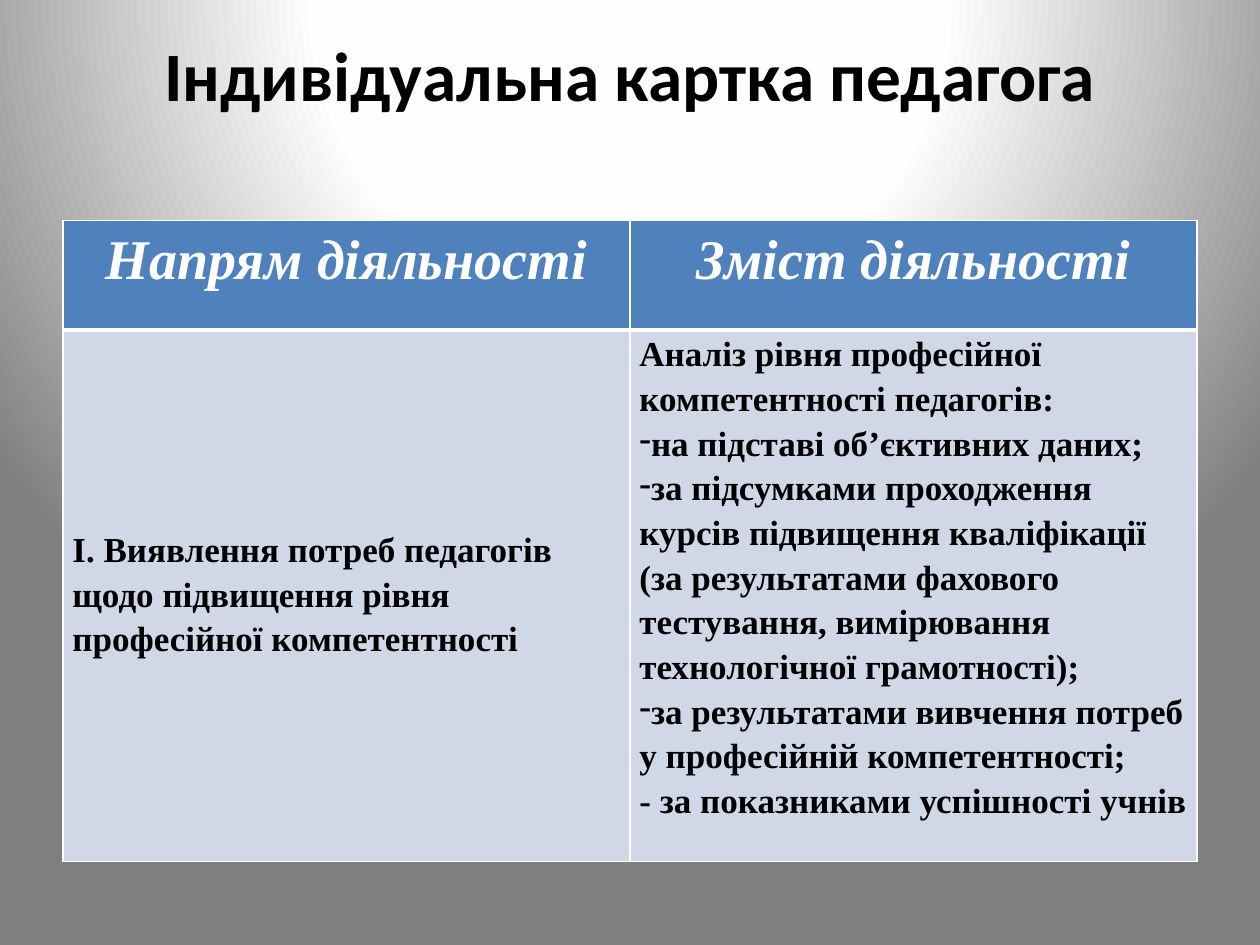
import pptx
import pptx.util
import pptx.oxml
import pptx.oxml.ns
import pptx.dml.color
import pptx.enum.text
from lxml import etree

Pt = pptx.util.Pt
qn = pptx.oxml.ns.qn
ALIGN = pptx.enum.text.PP_ALIGN
ANCHOR = pptx.enum.text.MSO_ANCHOR

COLORS = {
    "black": "000000",
    "white": "FFFFFF",
    "near_white": "FEFEFE",
    "grey": "7F7F7F",
    "header": "4F81BD",
    "body": "D0D8E8",
}

HEADERS = ["Напрям діяльності", "Зміст діяльності"]
DIRECTION = ["І. Виявлення потреб педагогів щодо підвищення рівня професійної компетентності"]
# Each paragraph of the content cell: text, bulleted or not
CONTENT = [
    ("Аналіз рівня професійної компетентності педагогів:", False),
    ("на підставі об’єктивних даних;", True),
    ("за підсумками проходження курсів підвищення кваліфікації (за результатами "
     "фахового тестування, вимірювання технологічної грамотності);", True),
    ("за результатами вивчення потреб у професійній компетентності;", True),
    ("- за показниками успішності учнів", False),
]


def rgb(name):
    return pptx.dml.color.RGBColor.from_string(COLORS[name])


def write(paragraph, text, size=20, font="Times New Roman", color="black",
          italic=False, align=ALIGN.LEFT, spacing=1.15, bullet=None):
    paragraph.alignment = align
    paragraph.line_spacing = spacing
    run = paragraph.add_run()
    run.text = text
    run.font.size = Pt(size)
    run.font.name = font
    run.font.bold = True
    run.font.italic = italic
    run.font.color.rgb = rgb(color)
    if bullet:
        properties = paragraph._p.get_or_add_pPr()
        properties.set("marL", "0")
        properties.set("indent", "0")
        etree.SubElement(properties, qn("a:buChar"), char=bullet)


def paint_background(slide):
    stops = [(0, "white"), (40, "near_white"), (100, "grey")]
    stop_xml = "".join(
        f'<a:gs pos="{pos * 1000}"><a:srgbClr val="{COLORS[name]}"/></a:gs>'
        for pos, name in stops)
    background = pptx.oxml.parse_xml(
        f'<p:bg {pptx.oxml.ns.nsdecls("p", "a")}><p:bgPr><a:gradFill rotWithShape="1">'
        f'<a:gsLst>{stop_xml}</a:gsLst><a:path path="circle">'
        '<a:fillToRect l="50000" t="-80000" r="50000" b="180000"/></a:path>'
        '</a:gradFill><a:effectLst/></p:bgPr></p:bg>')
    slide._element.cSld.insert(0, background)


def add_title(slide, left, top, width, height):
    frame = slide.shapes.add_textbox(Pt(left), Pt(top), Pt(width), Pt(height)).text_frame
    frame.word_wrap = True
    frame.margin_top = frame.margin_bottom = 0
    frame.vertical_anchor = ANCHOR.TOP
    write(frame.paragraphs[0], "Індивідуальна картка педагога", size=39.6,
          font="Calibri", align=ALIGN.CENTER, spacing=1.0)


def style_cell(cell, fill, top=1, bottom=1):
    cell.margin_left = cell.margin_right = Pt(5.4)
    cell.margin_top = cell.margin_bottom = 0
    # Borders come before the fill in the cell properties
    properties = cell._tc.get_or_add_tcPr()
    for side, weight in (("L", 1), ("R", 1), ("T", top), ("B", bottom)):
        line = etree.SubElement(properties, qn(f"a:ln{side}"), w=str(Pt(weight)))
        solid = etree.SubElement(line, qn("a:solidFill"))
        etree.SubElement(solid, qn("a:srgbClr"), val=COLORS["white"])
    cell.fill.solid()
    cell.fill.fore_color.rgb = rgb(fill)


def add_card_table(slide, left, top, width, row_heights):
    table = slide.shapes.add_table(2, 2, Pt(left), Pt(top), Pt(width),
                                   Pt(sum(row_heights))).table
    for row, height in zip(table.rows, row_heights):
        row.height = Pt(height)

    # Header row
    for column, heading in enumerate(HEADERS):
        cell = table.cell(0, column)
        style_cell(cell, "header", bottom=3)
        write(cell.text_frame.paragraphs[0], heading, size=32, color="white",
              italic=True, align=ALIGN.CENTER)

    # Direction of work and its content
    bodies = [[(text, False) for text in DIRECTION], CONTENT]
    for column, body in enumerate(bodies):
        cell = table.cell(1, column)
        style_cell(cell, "body", top=3)
        frame = cell.text_frame
        for index, (text, bulleted) in enumerate(body):
            paragraph = frame.add_paragraph() if index else frame.paragraphs[0]
            write(paragraph, text, bullet="-" if bulleted else None)
    direction_cell = table.cell(1, 0)
    direction_cell.vertical_anchor = ANCHOR.MIDDLE
    direction_cell.margin_bottom = Pt(3.5)


def main():
    deck = pptx.Presentation()
    deck.slide_width, deck.slide_height = Pt(720), Pt(540)
    slide = deck.slides.add_slide(deck.slide_layouts[6])
    paint_background(slide)
    add_title(slide, 36, 18.5, 648, 93)
    add_card_table(slide, 36, 126, 648, [62.5, 281])
    deck.save("out.pptx")


if __name__ == "__main__":
    main()
